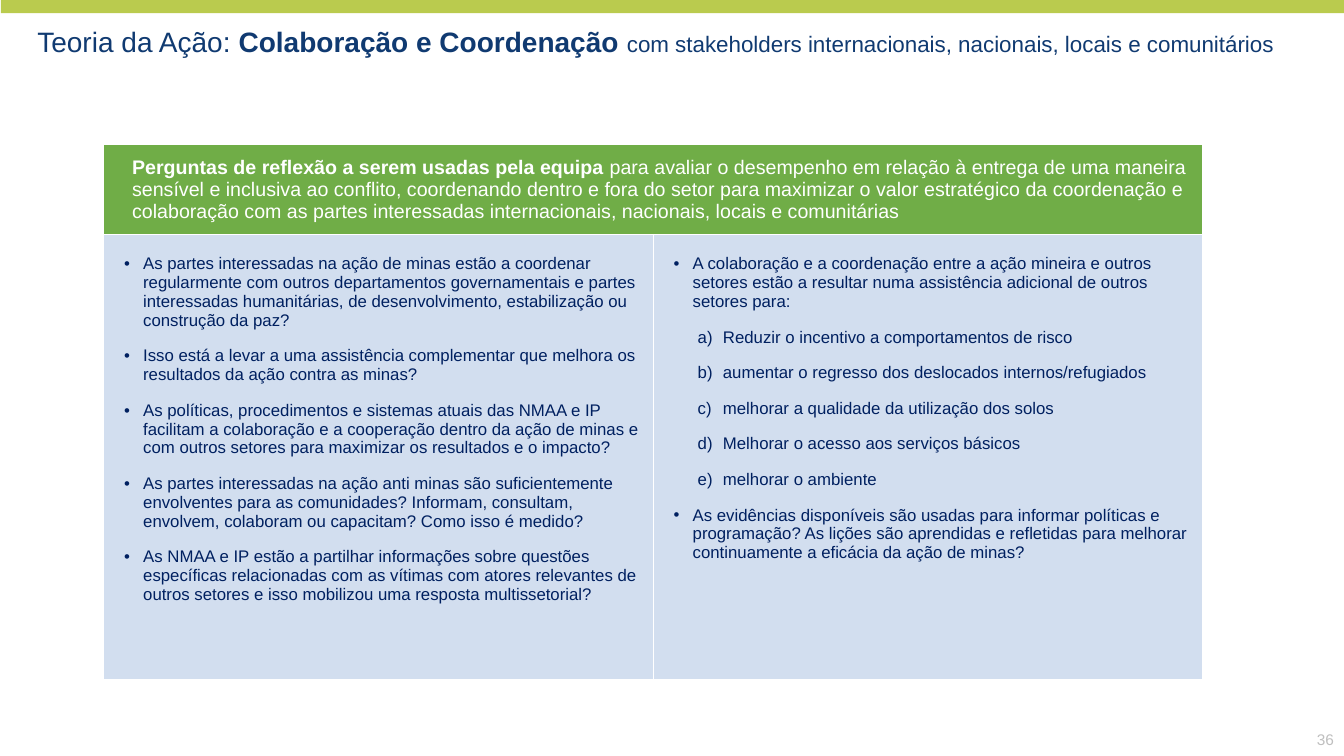
from lxml import etree
from pptx import Presentation
from pptx.dml.color import RGBColor
from pptx.enum.shapes import MSO_SHAPE
from pptx.enum.text import MSO_ANCHOR, MSO_AUTO_SIZE, PP_ALIGN
from pptx.oxml.ns import qn
from pptx.util import Inches, Pt

RECTANGLE = MSO_SHAPE.RECTANGLE
TOP, MIDDLE = MSO_ANCHOR.TOP, MSO_ANCHOR.MIDDLE
NO_AUTOFIT = MSO_AUTO_SIZE.NONE
LEFT, RIGHT = PP_ALIGN.LEFT, PP_ALIGN.RIGHT

FONT = "Arial"
COLORS = {
    "band": "BACB4E",
    "title": "103A71",
    "header": "70AD47",
    "body": "D2DEEF",
    "body_text": "002060",
    "white": "FFFFFF",
    "number": "BFBFBF",
}

TITLE = [
    ("Teoria da Ação: ", 20, False),
    ("Colaboração e Coordenação ", 20, True),
    ("com stakeholders internacionais, nacionais, locais e comunitários", 16, False),
]
HEADER = [
    ("Perguntas de reflexão a serem usadas pela equipa ", 14, True),
    ("para avaliar o desempenho em relação à entrega de uma maneira sensível e inclusiva "
     "ao conflito, coordenando dentro e fora do setor para maximizar o valor estratégico da "
     "coordenação e colaboração com as partes interessadas internacionais, nacionais, "
     "locais e comunitárias", 14, False),
]
QUESTIONS = [
    [
        ("bullet", "As partes interessadas na ação de minas estão a coordenar regularmente com "
         "outros departamentos governamentais e partes interessadas humanitárias, de "
         "desenvolvimento, estabilização ou construção da paz?"),
        ("bullet", "Isso está a levar a uma assistência complementar que melhora os resultados "
         "da ação contra as minas?"),
        ("bullet", "As políticas, procedimentos e sistemas atuais das NMAA e IP facilitam a "
         "colaboração e a cooperação dentro da ação de minas e com outros setores para "
         "maximizar os resultados e o impacto?"),
        ("bullet", "As partes interessadas na ação anti minas são suficientemente envolventes "
         "para as comunidades? Informam, consultam, envolvem, colaboram ou capacitam? Como "
         "isso é medido?"),
        ("bullet", "As NMAA e IP estão a partilhar informações sobre questões específicas "
         "relacionadas com as vítimas com atores relevantes de outros setores e isso mobilizou "
         "uma resposta multissetorial?"),
    ],
    [
        ("bullet", "A colaboração e a coordenação entre a ação mineira e outros setores estão a "
         "resultar numa assistência adicional de outros setores para:"),
        ("letter", "Reduzir o incentivo a comportamentos de risco"),
        ("letter", "aumentar o regresso dos deslocados internos/refugiados"),
        ("letter", "melhorar a qualidade da utilização dos solos"),
        ("letter", "Melhorar o acesso aos serviços básicos"),
        ("letter", "melhorar o ambiente"),
        ("bullet", "As evidências disponíveis são usadas para informar políticas e programação? "
         "As lições são aprendidas e refletidas para melhorar continuamente a eficácia da ação "
         "de minas?"),
    ],
]
PAGE_NUMBER = [("36", 11, False)]

SLIDE_WIDTH, SLIDE_HEIGHT = 13.33, 7.5
TABLE_LEFT, TABLE_TOP = 1.03, 1.43
COLUMN_WIDTH = 5.45
ROW_HEIGHTS = [0.89, 4.42]
HEADER_INSETS = (0.28, 0.12, 0.1, 0.12)
BODY_INSETS = (0.2, 0.2, 0.1, 0.05)
LISTS = {
    "bullet": (0.19, 0.19, "a:buChar", {"char": "•"}),
    "letter": (0.49, 0.25, "a:buAutoNum", {"type": "alphaLcParenR"}),
}


def color(name):
    return RGBColor.from_string(COLORS[name])


def add_runs(paragraph, runs, color_name):
    for text, size, bold in runs:
        run = paragraph.add_run()
        run.text = text
        run.font.name = FONT
        run.font.size = Pt(size)
        run.font.bold = bold
        run.font.color.rgb = color(color_name)


def set_insets(target, insets):
    (target.margin_left, target.margin_top,
     target.margin_right, target.margin_bottom) = map(Inches, insets)


def format_list(paragraph, kind):
    margin, hanging, tag, attributes = LISTS[kind]
    paragraph.space_after = Pt(12)
    properties = paragraph._p.get_or_add_pPr()
    properties.set("marL", str(Inches(margin)))
    properties.set("indent", str(-Inches(hanging)))
    etree.SubElement(properties, qn("a:buFont"), typeface=FONT)
    etree.SubElement(properties, qn(tag), attributes)


def format_cell(cell, fill_name, insets):
    properties = cell._tc.get_or_add_tcPr()
    for side in "LRTB":
        line = etree.SubElement(properties, qn(f"a:ln{side}"), w=str(Pt(1)))
        fill = etree.SubElement(line, qn("a:solidFill"))
        etree.SubElement(fill, qn("a:srgbClr"), val=COLORS["white"])
    cell.fill.solid()
    cell.fill.fore_color.rgb = color(fill_name)
    cell.vertical_anchor = TOP
    set_insets(cell, insets)


def add_band(slide):
    band = slide.shapes.add_shape(RECTANGLE, Inches(0.01), Inches(-0.01),
                                  Inches(SLIDE_WIDTH), Inches(0.14))
    band.shadow.inherit = False
    band.fill.solid()
    band.fill.fore_color.rgb = color("band")
    band.line.fill.background()


def add_title(slide):
    title = slide.shapes.title
    title.left, title.top, title.width, title.height = map(Inches, (0.37, 0.24, 12.52, 0.34))
    frame = title.text_frame
    frame.word_wrap = True
    frame.auto_size = NO_AUTOFIT
    frame.vertical_anchor = TOP
    set_insets(frame, (0, 0, 0, 0))
    frame.paragraphs[0].alignment = LEFT
    add_runs(frame.paragraphs[0], TITLE, "title")


def add_question_table(slide):
    columns = len(QUESTIONS)
    table = slide.shapes.add_table(
        len(ROW_HEIGHTS), columns, Inches(TABLE_LEFT), Inches(TABLE_TOP),
        Inches(COLUMN_WIDTH * columns), Inches(sum(ROW_HEIGHTS))).table
    table.first_row = table.horz_banding = False
    for row, height in zip(table.rows, ROW_HEIGHTS):
        row.height = Inches(height)
    for index, questions in enumerate(QUESTIONS):
        table.columns[index].width = Inches(COLUMN_WIDTH)
        format_cell(table.cell(0, index), "header", HEADER_INSETS)
        cell = table.cell(1, index)
        format_cell(cell, "body", BODY_INSETS)
        frame = cell.text_frame
        for position, (kind, text) in enumerate(questions):
            paragraph = frame.add_paragraph() if position else frame.paragraphs[0]
            format_list(paragraph, kind)
            add_runs(paragraph, [(text, 12, False)], "body_text")
    header = table.cell(0, 0)
    header.merge(table.cell(0, columns - 1))
    add_runs(header.text_frame.paragraphs[0], HEADER, "white")


def add_page_number(slide):
    width, height = 0.46, 0.33
    box = slide.shapes.add_textbox(Inches(SLIDE_WIDTH - width), Inches(SLIDE_HEIGHT - height),
                                   Inches(width), Inches(height))
    frame = box.text_frame
    frame.word_wrap = True
    frame.vertical_anchor = MIDDLE
    frame.paragraphs[0].alignment = RIGHT
    add_runs(frame.paragraphs[0], PAGE_NUMBER, "number")


def main():
    presentation = Presentation()
    presentation.slide_width = Inches(SLIDE_WIDTH)
    presentation.slide_height = Inches(SLIDE_HEIGHT)
    slide = presentation.slides.add_slide(presentation.slide_layouts[5])
    add_band(slide)
    add_title(slide)
    add_question_table(slide)
    add_page_number(slide)
    presentation.save("out.pptx")


if __name__ == "__main__":
    main()
